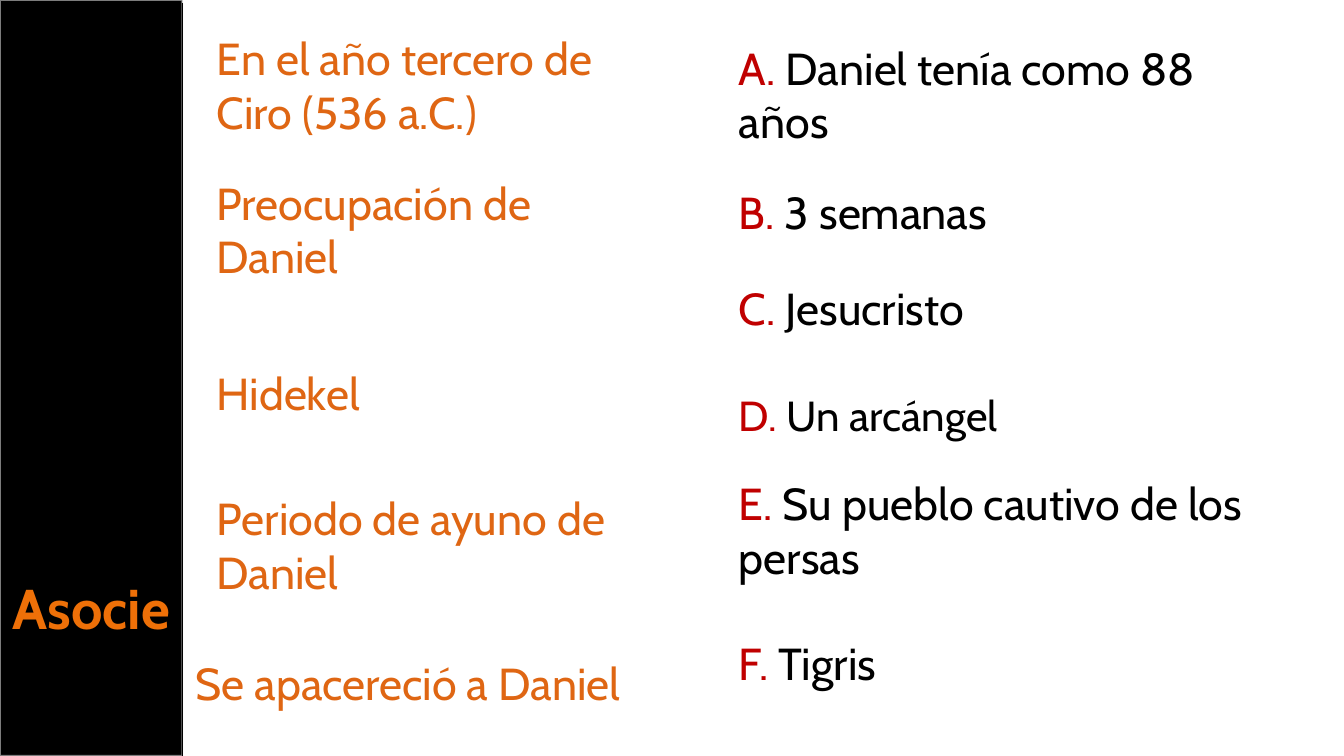
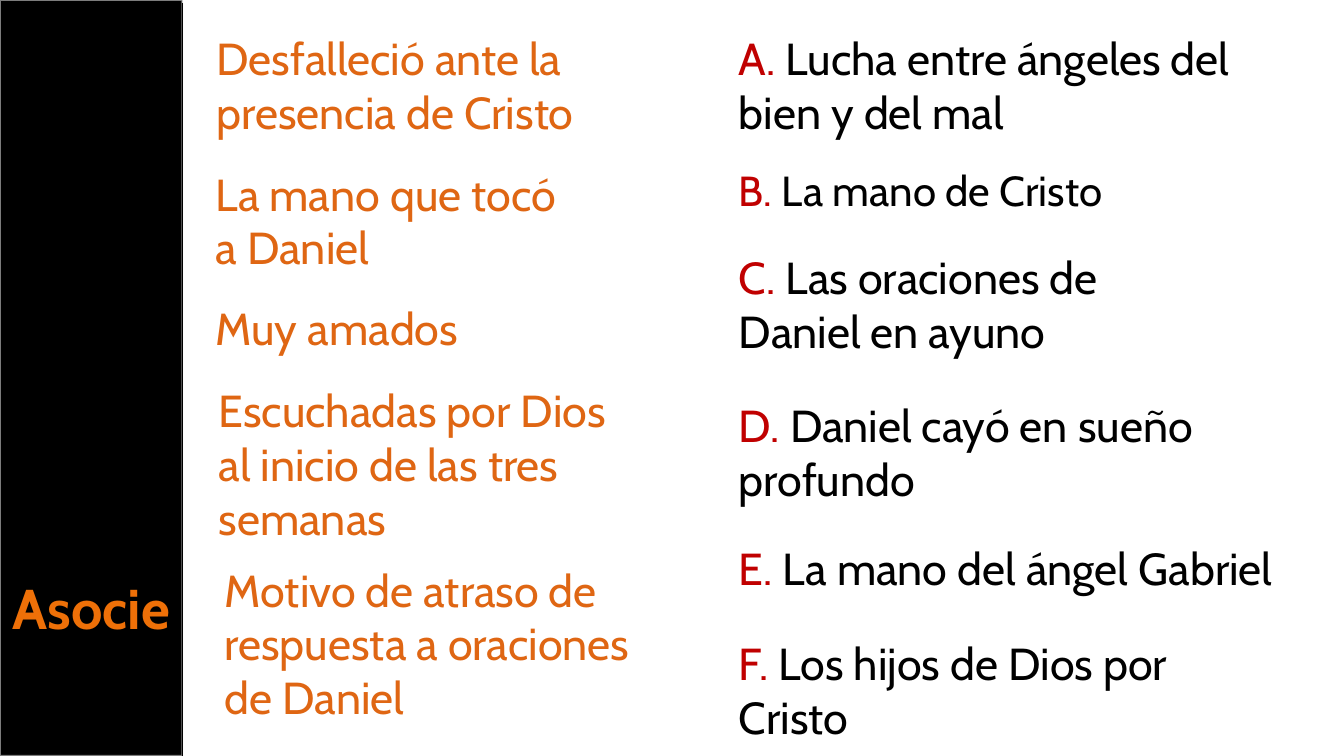
from lxml import etree
from pptx import Presentation
from pptx.dml.color import RGBColor
from pptx.enum import shapes, text
from pptx.oxml import ns
from pptx.util import Inches, Pt

BLACK = RGBColor(0, 0, 0)
WHITE = RGBColor(0xFF, 0xFF, 0xFF)
EDGE = RGBColor(0xF9, 0xF9, 0xF9)
RUST = RGBColor(0xDF, 0x66, 0x13)
RED = RGBColor(0xC0, 0, 0)
GOLD = RGBColor(0xEE, 0x70, 0x08)

WIDE, HIGH = 13.33, 7.5
BAND = 1.81
RIGHT = 7.23
BODY = {"name": "Cabin", "size": Pt(32), "bold": False}
SMALL = {**BODY, "size": Pt(30)}
TITLE = {"name": "Cabin", "size": Pt(40), "bold": True}

PAGES = [
    {
        "clues": [
            (2.05, 0.26, 4.59, 2, "En el año tercero de Ciro (536 a.C.)"),
            (2.05, 1.69, 3.84, 2, "Preocupación de Daniel"),
            (2.05, 3.58, 4.13, 1, "Hidekel"),
            (2.05, 4.82, 4.39, 2, "Periodo de ayuno de Daniel"),
            (1.84, 6.46, 4.59, 1, "Se apacereció a Daniel"),
        ],
        "answers": [
            (0.35, 5, 2, "Daniel tenía como 88 años", BODY),
            (1.78, 4.53, 1, "3 semanas", BODY),
            (2.74, 3.15, 1, "Jesucristo", BODY),
            (3.82, 4.18, 1, "Un arcángel", SMALL),
            (4.67, 5.59, 2, "Su pueblo cautivo de los persas", BODY),
            (6.26, 5.59, 1, "Tigris", BODY),
        ],
    },
    {
        "clues": [
            (2.05, 0.26, 4.59, 2, "Desfalleció ante la presencia de Cristo"),
            (2.04, 1.6, 3.84, 2, "La mano que tocó a Daniel"),
            (2.04, 2.93, 4.13, 1, "Muy amados"),
            (2.07, 3.75, 4.39, 3, "Escuchadas por Dios al inicio de las tres semanas"),
            (2.13, 5.53, 4.59, 3, "Motivo de atraso de respuesta a oraciones de Daniel"),
        ],
        "answers": [
            (0.26, 5.8, 2, "Lucha entre ángeles del bien y del mal", BODY),
            (1.58, 4.18, 1, "La mano de Cristo", SMALL),
            (2.43, 4.53, 2, "Las oraciones de Daniel en ayuno", BODY),
            (3.9, 5, 2, "Daniel cayó en sueño profundo", BODY),
            (5.32, 5.59, 1, "La mano del ángel Gabriel", BODY),
            (6.26, 5.59, 2, "Los hijos de Dios por Cristo", BODY),
        ],
    },
]


def add_text(slide, left, top, width, lines, runs, style, align=text.PP_ALIGN.LEFT):
    height = 0.1 + lines * style["size"].inches * 1.215
    box = slide.shapes.add_textbox(*map(Inches, (left, top, width, height)))
    frame = box.text_frame
    frame.word_wrap = True
    frame.auto_size = text.MSO_AUTO_SIZE.SHAPE_TO_FIT_TEXT
    par = frame.paragraphs[0]
    par.alignment = align
    for words, color in runs:
        run = par.add_run()
        run.text = words
        for key, value in style.items():
            setattr(run.font, key, value)
        run.font.color.rgb = color


def add_band(slide):
    band = slide.shapes.add_shape(
        shapes.MSO_SHAPE.RECTANGLE, 0, 0, Inches(BAND), Inches(HIGH))
    band.shadow.inherit = False
    band.fill.solid()
    band.fill.fore_color.rgb = BLACK
    band.line.color.rgb = EDGE
    band.line.width = Pt(1.35)
    tint = band.line.fill._xPr.find(".//" + ns.qn("a:srgbClr"))
    etree.SubElement(tint, ns.qn("a:alpha"), val="50000")


def add_rule(slide):
    rule = slide.shapes.add_connector(
        shapes.MSO_CONNECTOR.STRAIGHT,
        *map(Inches, (BAND, 0.03, BAND, HIGH)))
    rule.line.color.rgb = BLACK
    rule.line.width = Pt(0.85)
    etree.SubElement(rule._element.spPr, ns.qn("a:effectLst"))


def add_page(deck, page):
    slide = deck.slides.add_slide(deck.slide_layouts[6])
    slide.background.fill.solid()
    slide.background.fill.fore_color.rgb = WHITE
    add_band(slide)
    for left, top, width, lines, words in page["clues"]:
        add_text(slide, left, top, width, lines, [(words, RUST)], BODY)
    for mark, (top, width, lines, words, style) in zip("ABCDEF", page["answers"]):
        runs = [(f"{mark}. ", RED), (words, BLACK)]
        add_text(slide, RIGHT, top, width, lines, runs, style)
    add_text(slide, 0, 5.64, BAND, 1, [("Asocie", GOLD)], TITLE,
             text.PP_ALIGN.CENTER)
    add_rule(slide)


def main():
    deck = Presentation()
    deck.slide_width = Inches(WIDE)
    deck.slide_height = Inches(HIGH)
    for page in PAGES:
        add_page(deck, page)
    deck.save("out.pptx")


if __name__ == "__main__":
    main()
